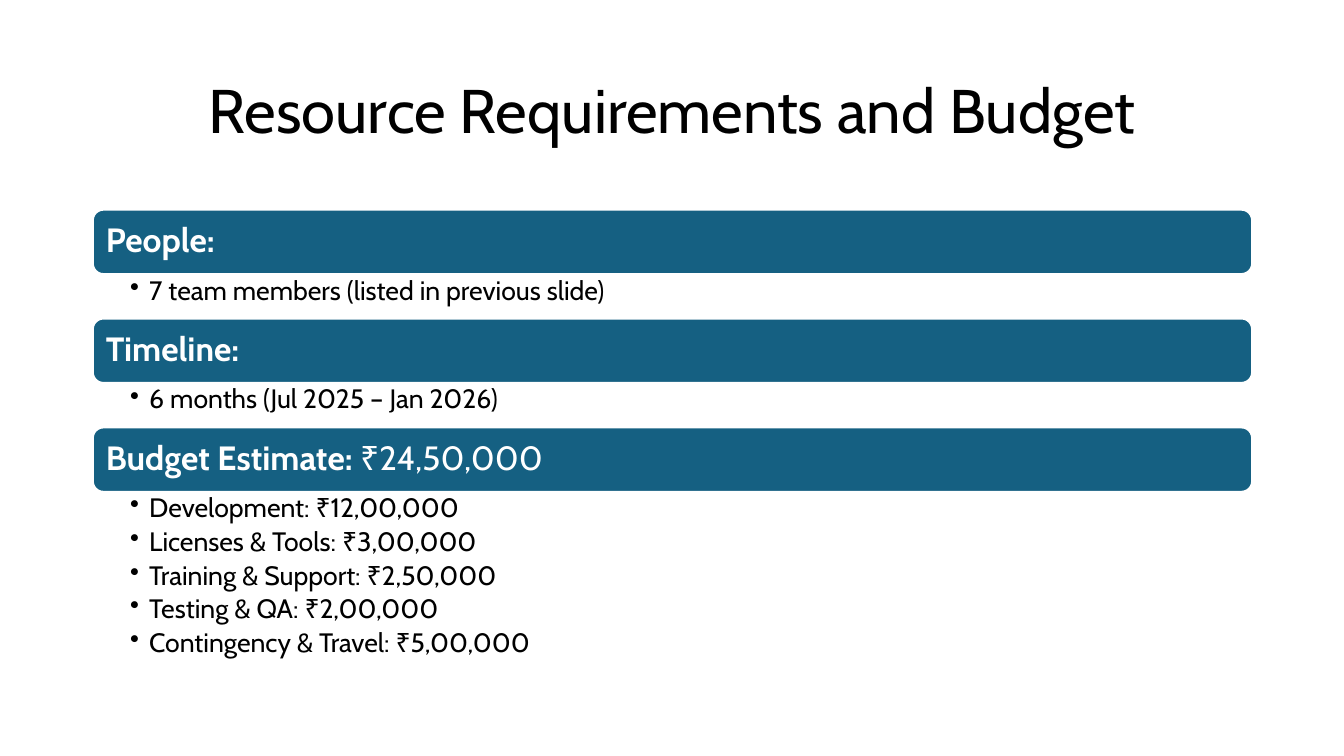
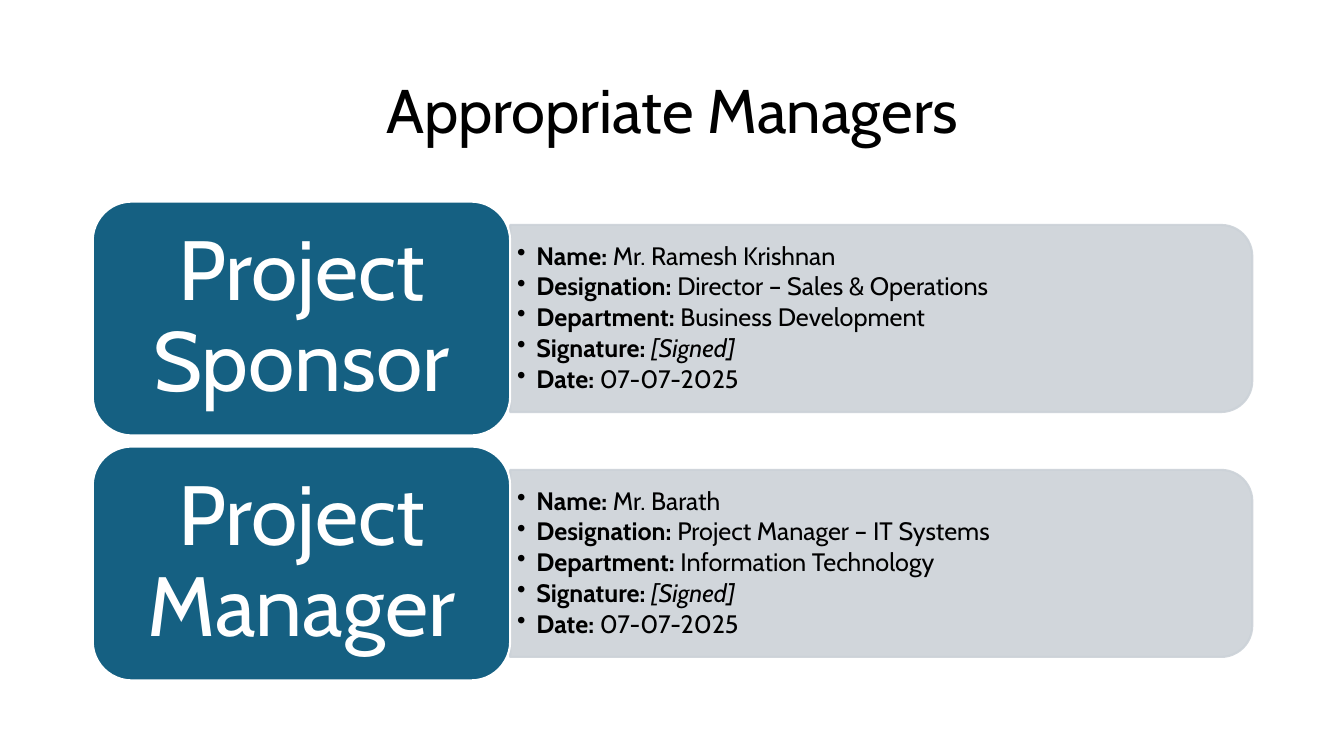
"""Build two project charter slides: resources and budget, and managers."""
from dataclasses import dataclass

from lxml.etree import SubElement
from pptx import Presentation
from pptx.dml.color import RGBColor as RGB
from pptx.enum.shapes import MSO_SHAPE as SHAPE
from pptx.enum.text import MSO_ANCHOR as ANCHOR, PP_ALIGN as ALIGN
from pptx.oxml.ns import qn
from pptx.util import Inches, Pt


@dataclass(frozen=True)
class Theme:
    font: str = "Cabin"
    ink: RGB = RGB(0, 0, 0)
    white: RGB = RGB(255, 255, 255)
    accent: RGB = RGB(0x15, 0x60, 0x82)
    panel: RGB = RGB(0xCC, 0xD2, 0xD8)
    panel_opacity: int = 90
    title: int = 44
    band: int = 24
    item: int = 19
    role: int = 60
    detail: int = 18
    outline: float = 1.5
    spacing: float = 0.9
    indent: float = 0.19


T = Theme()
SLIDE_W, SLIDE_H = 13.33, 7.5
LEFT, WIDTH = 0.92, 11.5

BUDGET_TITLE = "Resource Requirements and Budget"
SECTIONS = [
    ("People:", "", ["7 team members (listed in previous slide)"]),
    ("Timeline:", "", ["6 months (Jul 2025 – Jan 2026)"]),
    ("Budget Estimate:", " ₹24,50,000", [
        "Development: ₹12,00,000",
        "Licenses & Tools: ₹3,00,000",
        "Training & Support: ₹2,50,000",
        "Testing & QA: ₹2,00,000",
        "Contingency & Travel: ₹5,00,000",
    ]),
]

MANAGERS_TITLE = "Appropriate Managers"
MANAGERS = [
    ("Project Sponsor", [
        ("Name:", "Mr. Ramesh Krishnan"),
        ("Designation:", "Director – Sales & Operations"),
        ("Department:", "Business Development"),
        ("Signature:", "[Signed]"),
        ("Date:", "07-07-2025"),
    ]),
    ("Project Manager", [
        ("Name:", "Mr. Barath"),
        ("Designation:", "Project Manager – IT Systems"),
        ("Department:", "Information Technology"),
        ("Signature:", "[Signed]"),
        ("Date:", "07-07-2025"),
    ]),
]


def write(tf, lines, size, color, align=ALIGN.LEFT, bullet=False, after=0):
    """Fill a frame; each line is a list of (text, style) runs."""
    tf.word_wrap = True
    for i, runs in enumerate(lines):
        p = tf.add_paragraph() if i else tf.paragraphs[0]
        if bullet:
            pPr = p._p.get_or_add_pPr()
            pPr.set("marL", str(Inches(T.indent)))
            pPr.set("indent", str(-Inches(T.indent)))
            SubElement(pPr, qn("a:buChar"), char="•")
        p.alignment, p.line_spacing, p.space_after = align, T.spacing, Pt(after)
        for text, style in runs:
            r = p.add_run()
            r.text = text
            f = r.font
            f.name, f.size, f.color.rgb = T.font, Pt(size), color
            f.bold, f.italic = style == "b", style == "i"


def set_insets(tf, left, top, right, bottom):
    """Set the frame's margins in inches."""
    tf.margin_left, tf.margin_top = Inches(left), Inches(top)
    tf.margin_right, tf.margin_bottom = Inches(right), Inches(bottom)


def add_box(slide, kind, x, y, w, h, fill, line):
    """Add a filled and outlined shape."""
    sp = slide.shapes.add_shape(kind, *map(Inches, (x, y, w, h)))
    sp.shadow.inherit = False
    sp.fill.solid()
    sp.fill.fore_color.rgb = fill
    sp.line.color.rgb = line
    sp.line.width = Pt(T.outline)
    return sp


def add_label(slide, x, y, w, h, runs, size, align, insets):
    """Add an accent block with its heading."""
    sp = add_box(slide, SHAPE.ROUNDED_RECTANGLE, x, y, w, h, T.accent, T.white)
    tf = sp.text_frame
    tf.vertical_anchor = ANCHOR.MIDDLE
    set_insets(tf, *insets)
    write(tf, [runs], size, T.white, align)


def add_list(slide, x, y, w, h, lines, size, insets, after, anchor=ANCHOR.TOP):
    """Add a bulleted list."""
    tf = slide.shapes.add_textbox(*map(Inches, (x, y, w, h))).text_frame
    tf.vertical_anchor = anchor
    set_insets(tf, *insets)
    write(tf, lines, size, T.ink, bullet=True, after=after)


def add_panel(slide, x, y, w, h):
    """Add a translucent panel rounded on its right side."""
    sp = add_box(slide, SHAPE.ROUND_2_SAME_RECTANGLE, x + (w - h) / 2,
                 y + (h - w) / 2, h, w, T.panel, T.panel)
    sp.rotation = 90
    for clr in sp._element.spPr.iter(qn("a:srgbClr")):
        SubElement(clr, qn("a:alpha"), val=str(T.panel_opacity * 1000))


def add_slide(prs, layout, title):
    """Add a slide with the shared title style."""
    slide = prs.slides.add_slide(layout)
    write(slide.shapes.title.text_frame, [[(title, "")]], T.title, T.ink, ALIGN.CENTER)
    return slide


def build_budget(slide):
    """Stack a heading band and list for each section."""
    y, band_h, row_h, pad = 2.08, 0.64, 0.34, 0.1
    for head, value, items in SECTIONS:
        runs = [(head, "b")] + ([(value, "")] if value else [])
        add_label(slide, LEFT, y, WIDTH, band_h, runs, T.band, ALIGN.LEFT, [0.1] * 4)
        y += band_h
        list_h = row_h * len(items) + pad
        add_list(slide, LEFT, y, WIDTH, list_h, [[(item, "")] for item in items],
                 T.item, (0.37, 0.03, 0.19, 0.03), 3.5)
        y += list_h


def build_managers(slide):
    """Pair each role block with a panel of details."""
    top, block_h, pitch = 2, 2.32, 2.43
    role_w, panel_h = 0.36 * WIDTH, 0.8 * block_h
    x, panel_w = LEFT + role_w, WIDTH - role_w
    for i, (role, details) in enumerate(MANAGERS):
        y = top + i * pitch
        panel_y = y + (block_h - panel_h) / 2
        lines = [[(f"{key} ", "b"), (value, "i" if key == "Signature:" else "")]
                 for key, value in details]
        add_panel(slide, x, panel_y, panel_w, panel_h)
        add_list(slide, x, panel_y, panel_w, panel_h, lines, T.detail,
                 (0.07, 0.04, 0.07, 0.04), 2.5, ANCHOR.MIDDLE)
        add_label(slide, LEFT, y, role_w, block_h, [(role, "")], T.role,
                  ALIGN.CENTER, (0.25, 0.12, 0.25, 0.12))


def main():
    """Build and save the deck."""
    prs = Presentation()
    prs.slide_width, prs.slide_height = Inches(SLIDE_W), Inches(SLIDE_H)
    layout = prs.slide_layouts[5]
    title = layout.placeholders[0]
    title.left, title.top = Inches(LEFT), Inches(0.4)
    title.width, title.height = Inches(WIDTH), Inches(1.45)
    build_budget(add_slide(prs, layout, BUDGET_TITLE))
    build_managers(add_slide(prs, layout, MANAGERS_TITLE))
    prs.save("out.pptx")


if __name__ == "__main__":
    main()
